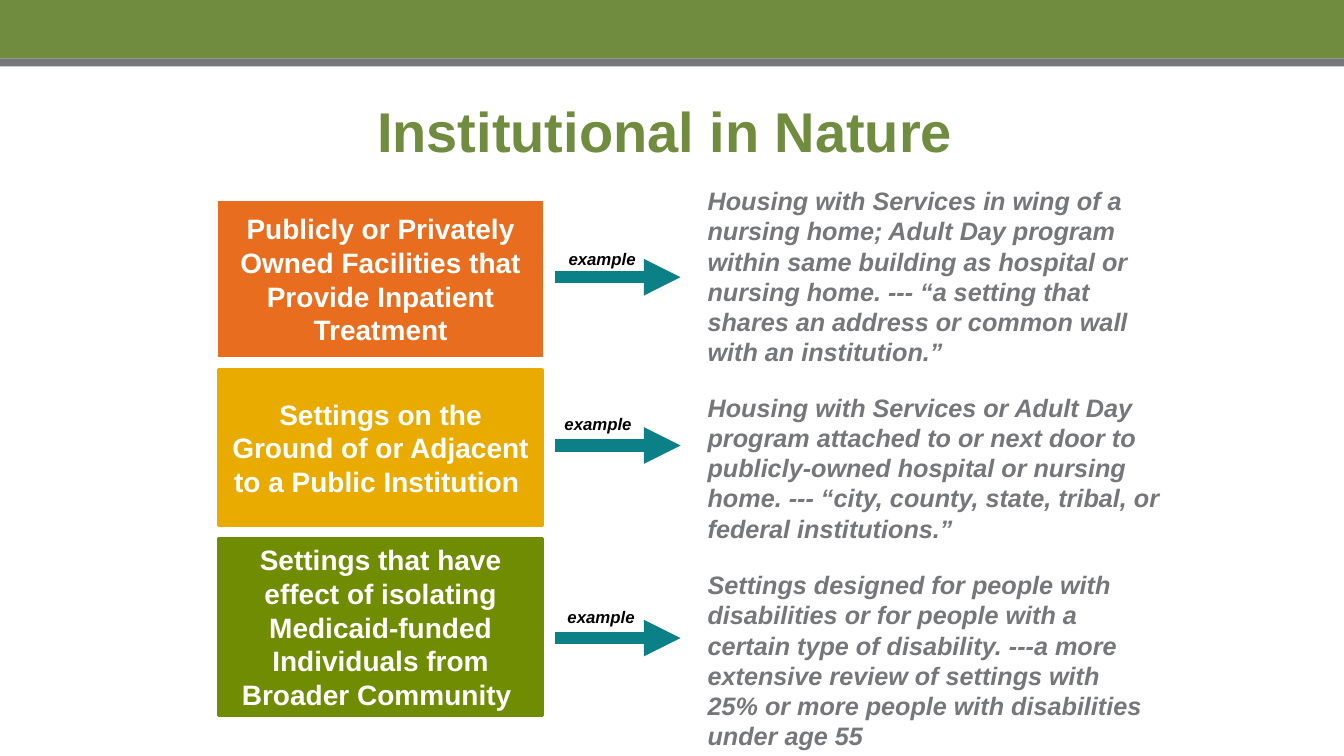
import pptx
import pptx.dml.color
import pptx.enum.shapes
import pptx.enum.text
import pptx.oxml
import pptx.oxml.ns
import pptx.util

PX = 9144  # EMU per px, 100 px to the inch
THEME = {
    "olive": "708C3F", "gray": "75777A", "orange": "E86D1F", "gold": "EAAB00",
    "green": "708C03", "teal": "0B8187", "white": "FFFFFF", "black": "000000",
    "font": "Arial", "title": 40, "category": 20, "detail": 18, "label": 12,
    "arrow": 8.75,
}
ALIGN = pptx.enum.text.PP_ALIGN
ANCHOR = pptx.enum.text.MSO_ANCHOR


def color(name):
    return pptx.dml.color.RGBColor.from_string(THEME[name])


def write(shape, text, size, ink, italic=False, align=ALIGN.LEFT, anchor=ANCHOR.TOP):
    """Fill a shape with one bold, wrapped paragraph."""
    frame = shape.text_frame
    frame.word_wrap = True
    frame.vertical_anchor = anchor
    paragraph = frame.paragraphs[0]
    paragraph.alignment = align
    run = paragraph.add_run()
    run.text = text
    font_format = {"name": THEME["font"], "size": pptx.util.Pt(THEME[size]),
                   "bold": True, "italic": italic}
    for attribute, value in font_format.items():
        setattr(run.font, attribute, value)
    run.font.color.rgb = color(ink)


deck = pptx.Presentation()
deck.slide_width, deck.slide_height = 1333 * PX, 750 * PX
slide = deck.slides.add_slide(deck.slide_layouts[6])
shapes = slide.shapes
RECTANGLE = pptx.enum.shapes.MSO_SHAPE.RECTANGLE

# Header bands
for top, height, fill in [(0, 58, "olive"), (58, 8, "gray")]:
    band = shapes.add_shape(RECTANGLE, 0, top * PX, 1333 * PX, height * PX)
    band.shadow.inherit = False
    band.fill.solid()
    band.fill.fore_color.rgb = color(fill)
    band.line.fill.background()

title = shapes.add_textbox(67 * PX, 67 * PX, 1200 * PX, 125 * PX)
write(title, "Institutional in Nature ", "title", "olive",
      align=ALIGN.CENTER, anchor=ANCHOR.MIDDLE)

# Each row: category (text, fill, line width, top, height), arrow height,
# label (left, top), detail (text, top, width, height)
rows = [
    (("Publicly or Privately Owned Facilities that Provide Inpatient Treatment",
      "orange", 0.75, 200, 154), 275, (554, 242),
     ("Housing with Services in wing of a nursing home; Adult Day program within "
      "same building as hospital or nursing home. --- “a setting that shares an "
      "address or common wall with an institution.”", 179, 446, 192)),
    (("Settings on the Ground of or Adjacent to a Public Institution ",
      "gold", 2, 367, 154), 442, (550, 406),
     ("Housing with Services or Adult Day program attached to or next door to "
      "publicly-owned hospital or nursing home. --- “city, county, state, tribal, "
      "or federal institutions.”", 384, 475, 162)),
    (("Settings that have effect of isolating Medicaid-funded Individuals from "
      "Broader Community ", "green", 2, 534, 176), 633, (553, 597),
     ("Settings designed for people with disabilities or for people with a certain "
      "type of disability. ---a more extensive review of settings with 25% or more "
      "people with disabilities under age 55", 560, 457, 192)),
]

for category_parts, arrow_y, (label_left, label_top), detail_parts in rows:
    text, fill, outline, top, height = category_parts
    category = shapes.add_shape(RECTANGLE, 217 * PX, top * PX, 321 * PX, height * PX)
    category.shadow.inherit = False
    category.fill.solid()
    category.fill.fore_color.rgb = color(fill)
    category.line.color.rgb = color(fill)
    category.line.width = pptx.util.Pt(outline)
    write(category, text, "category", "white", align=ALIGN.CENTER, anchor=ANCHOR.MIDDLE)

    arrow = shapes.add_connector(pptx.enum.shapes.MSO_CONNECTOR.STRAIGHT,
                                 550 * PX, arrow_y * PX, 675 * PX, arrow_y * PX)
    arrow.line.color.rgb = color("teal")
    arrow.line.width = pptx.util.Pt(THEME["arrow"])
    properties = arrow.element.spPr
    arrowhead = pptx.oxml.parse_xml(
        f'<a:tailEnd {pptx.oxml.ns.nsdecls("a")} type="triangle"/>')
    properties.find(pptx.oxml.ns.qn("a:ln")).append(arrowhead)
    properties.append(pptx.oxml.parse_xml(f'<a:effectLst {pptx.oxml.ns.nsdecls("a")}/>'))

    text, top, width, height = detail_parts
    detail = shapes.add_textbox(692 * PX, top * PX, width * PX, height * PX)
    write(detail, text, "detail", "gray", italic=True)

    label = shapes.add_textbox(label_left * PX, label_top * PX, 92 * PX, 30 * PX)
    write(label, "example", "label", "black", italic=True)

deck.save("out.pptx")
